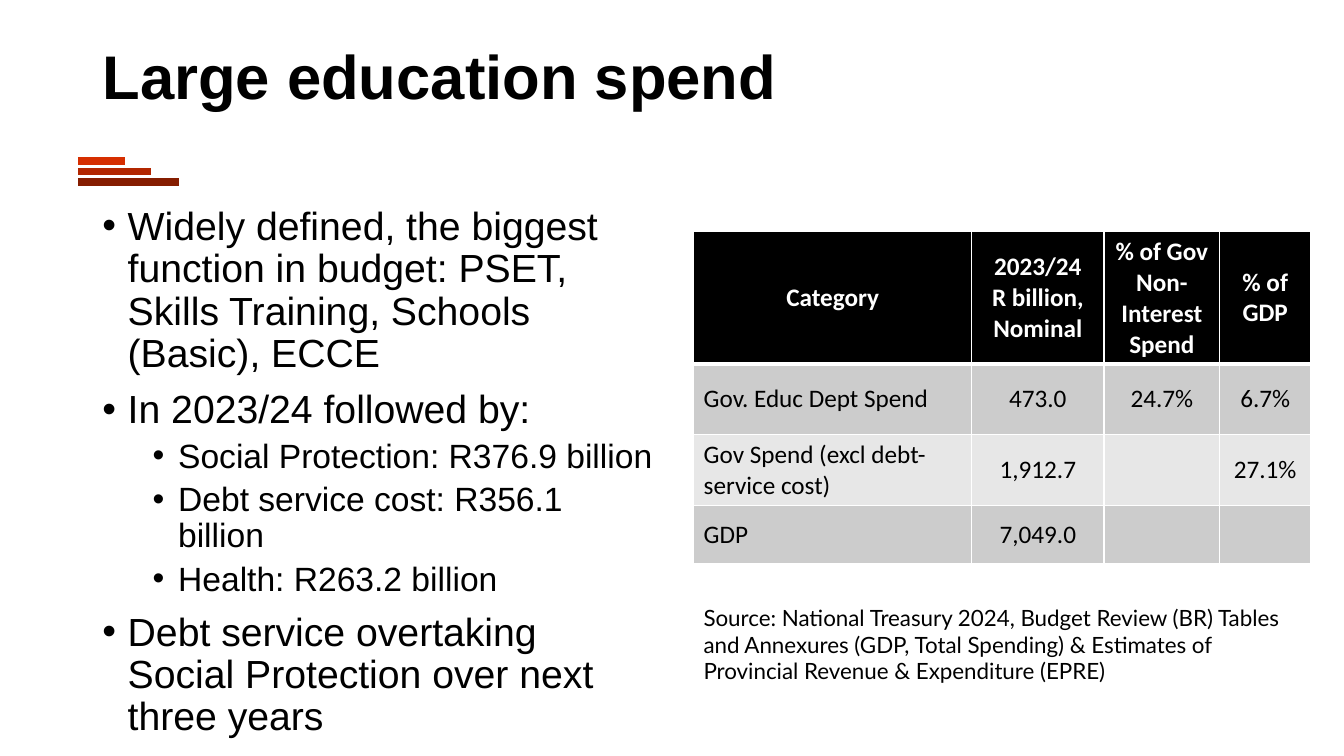
from pptx import Presentation
from pptx.dml.color import RGBColor as Rgb
from pptx.enum.shapes import MSO_CONNECTOR as Conn
from pptx.enum.text import MSO_ANCHOR as Anchor, PP_ALIGN as Align
from pptx.oxml import parse_xml
from pptx.oxml.ns import nsdecls, qn
from pptx.util import Cm, Pt
from lxml.etree import SubElement

HUES = {
    "text": "000000", "head": "000000", "white": "FFFFFF",
    "dark": "CCCCCC", "light": "E7E7E7",
    "bar1": "D62E00", "bar2": "B22600", "bar3": "851D00",
}
POINTS = [
    (0, "Widely defined, the biggest function in budget: PSET, "
        "Skills Training, Schools (Basic), ECCE"),
    (0, "In 2023/24 followed by:"),
    (1, "Social Protection: R376.9 billion"),
    (1, "Debt service cost: R356.1 billion"),
    (1, "Health: R263.2 billion"),
    (0, "Debt service overtaking Social Protection over next three years"),
]
ROWS = [
    ["Category", "2023/24\nR billion, Nominal",
     "% of Gov Non-Interest Spend", "% of GDP"],
    ["Gov. Educ Dept Spend", "473.0", "24.7%", "6.7%"],
    ["Gov Spend (excl debt-service cost)", "1,912.7", "", "27.1%"],
    ["GDP", "7,049.0", "", ""],
]
SOURCE = ("Source: National Treasury 2024, Budget Review (BR) Tables and "
          "Annexures (GDP, Total Spending) & Estimates of Provincial "
          "Revenue & Expenditure (EPRE)")


def color(name):
    return Rgb.from_string(HUES[name])


def add_run(para, text, size, face, hue="text", bold=False):
    run = para.add_run()
    run.text = text
    font = run.font
    font.size, font.name, font.bold = Pt(size), face, bold
    font.color.rgb = color(hue)


def add_box(slide, box):
    frame = slide.shapes.add_textbox(*map(Cm, box)).text_frame
    frame.word_wrap = True
    return frame


def add_title(slide, box):
    title = slide.shapes.title
    title.left, title.top, title.width, title.height = map(Cm, box)
    frame = title.text_frame
    frame.vertical_anchor = Anchor.MIDDLE
    para = frame.paragraphs[0]
    para.alignment = Align.LEFT
    para.line_spacing = 0.9
    add_run(para, "Large education spend", 44, "Arial", bold=True)


def add_bars(slide, left, top):
    """Stepped bars under the title."""
    for i, width in enumerate((1.19, 1.85, 2.54)):
        y = Cm(top + i * 0.26)
        bar = slide.shapes.add_connector(
            Conn.STRAIGHT, Cm(left), y, Cm(left + width), y)
        bar.line.color.rgb = color(f"bar{i + 1}")
        bar.line.width = Pt(5.5)
        SubElement(bar._element.spPr, qn("a:effectLst"))


def add_points(slide, box):
    frame = add_box(slide, box)
    for i, (level, text) in enumerate(POINTS):
        para = frame.add_paragraph() if i else frame.paragraphs[0]
        para.level = level
        # Hanging bullet
        props = para._p.get_or_add_pPr()
        props.set("marL", str(Cm(0.64 + 1.27 * level)))
        props.set("indent", str(-Cm(0.64)))
        SubElement(props, qn("a:buFont")).set("typeface", "Arial")
        SubElement(props, qn("a:buChar")).set("char", "•")
        para.line_spacing = 0.9
        if i:
            para.space_before = Pt(5 if level else 10)
        add_run(para, text, 24 if level else 28, "Arial")


def add_edges(cell, base):
    """White cell borders, with the given width in points at the bottom."""
    props = cell._tc.get_or_add_tcPr()
    for side, width in (("L", 1), ("R", 1), ("T", 1), ("B", base)):
        props.append(parse_xml(
            f'<a:ln{side} {nsdecls("a")} w="{Pt(width)}"><a:solidFill>'
            f'<a:srgbClr val="{HUES["white"]}"/></a:solidFill></a:ln{side}>'))


def add_spend(slide, box):
    grid = slide.shapes.add_table(
        len(ROWS), len(ROWS[0]), *map(Cm, box)).table
    for col, width in zip(grid.columns, (7.01, 3.33, 2.92, 2.29)):
        col.width = Cm(width)
    for row, height in zip(grid.rows, (3.33, 1.78, 1.78, 1.47)):
        row.height = Cm(height)
    for r, row in enumerate(ROWS):
        head = r == 0
        fill = "head" if head else "dark" if r % 2 else "light"
        for c, text in enumerate(row):
            cell = grid.cell(r, c)
            add_edges(cell, 3 if head else 1)
            cell.fill.solid()
            cell.fill.fore_color.rgb = color(fill)
            cell.vertical_anchor = Anchor.MIDDLE
            if not text:
                continue
            frame = cell.text_frame
            for i, line in enumerate(text.split("\n")):
                para = frame.add_paragraph() if i else frame.paragraphs[0]
                para.alignment = Align.CENTER if head or c else Align.LEFT
                add_run(para, line, 18, "Calibri",
                        "white" if head else "text", head)


def add_source(slide, box):
    add_run(add_box(slide, box).paragraphs[0], SOURCE, 16, "Lato")


def main():
    deck = Presentation()
    deck.slide_width, deck.slide_height = Cm(33.87), Cm(19.05)
    slide = deck.slides.add_slide(deck.slide_layouts[5])
    add_bars(slide, 1.96, 4.06)
    add_title(slide, (2.33, 0.48, 29.21, 3.05))
    add_points(slide, (2.33, 5.08, 14.4, 12.09))
    add_spend(slide, (17.48, 5.84, 15.55, 8.36))
    add_source(slide, (17.48, 15.09, 15.55, 2.31))
    deck.save("out.pptx")


if __name__ == "__main__":
    main()
